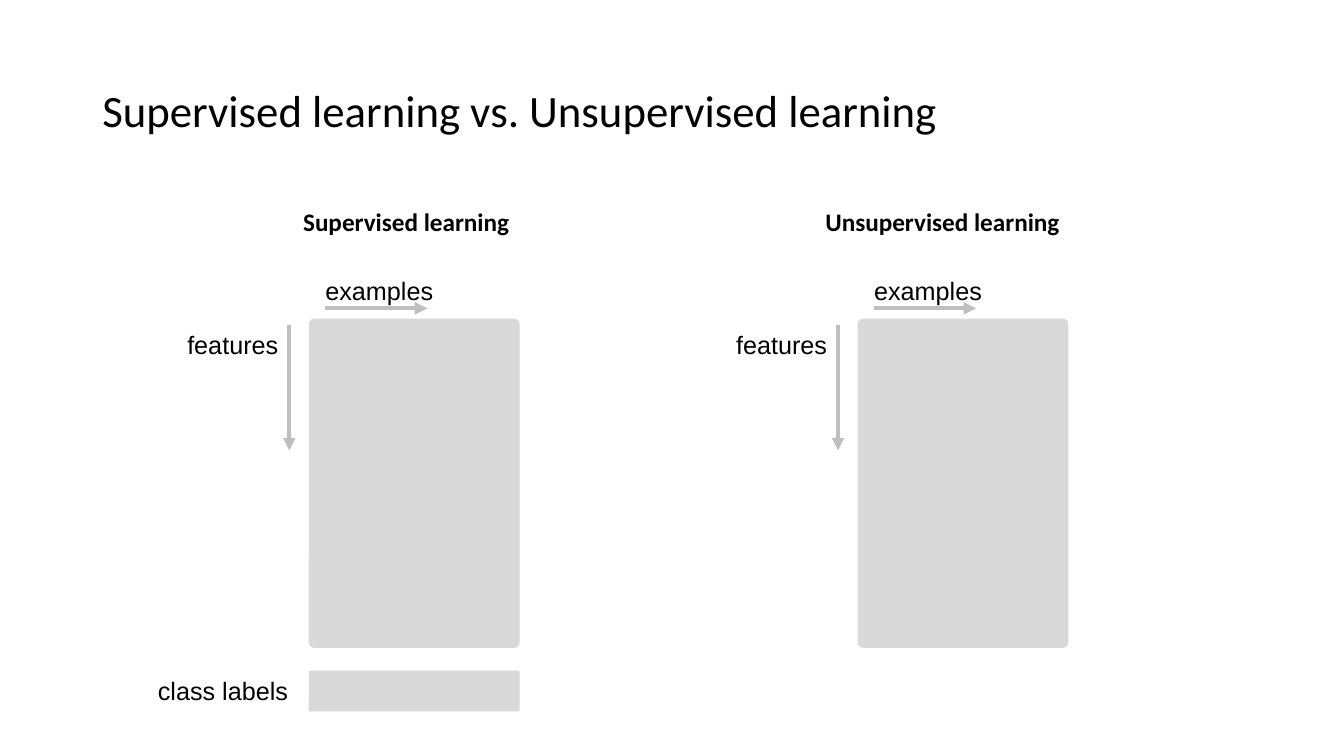
"""Builds a slide that compares supervised with unsupervised learning."""
from lxml import etree
from pptx import Presentation
from pptx.dml.color import RGBColor
from pptx.enum.shapes import MSO_CONNECTOR, MSO_SHAPE
from pptx.enum.text import MSO_ANCHOR, MSO_AUTO_SIZE
from pptx.oxml.ns import qn
from pptx.util import Cm, Pt

STRAIGHT = MSO_CONNECTOR.STRAIGHT
ROUNDED = MSO_SHAPE.ROUNDED_RECTANGLE
TOP, MIDDLE = MSO_ANCHOR.TOP, MSO_ANCHOR.MIDDLE
FIT, NO_FIT = MSO_AUTO_SIZE.SHAPE_TO_FIT_TEXT, MSO_AUTO_SIZE.NONE

BLACK, ARROW_GREY, BOX_GREY = "000000", "BFBFBF", "D9D9D9"
LEFT_PANEL, PANEL_STEP = 7.8, 13.83
BOX_WIDTH = 5.28
LABEL_HEIGHT = 1.02


def paint(color_format, color):
    color_format.rgb = RGBColor.from_string(color)


def add_text(s, text, x, y, w, h=LABEL_HEIGHT, *, font="Arial", size=18,
             bold=False, wrap=False, anchor=TOP, fit=FIT, spacing=1.0):
    tf = s.shapes.add_textbox(Cm(x), Cm(y), Cm(w), Cm(h)).text_frame
    tf.word_wrap = wrap
    tf.auto_size = fit
    tf.vertical_anchor = anchor
    p = tf.paragraphs[0]
    p.line_spacing = spacing
    r = p.add_run()
    r.text = text
    r.font.name = font
    r.font.size = Pt(size)
    r.font.bold = bold
    paint(r.font.color, BLACK)


def add_box(s, x, y, h):
    sp = s.shapes.add_shape(ROUNDED, Cm(x), Cm(y), Cm(BOX_WIDTH), Cm(h))
    sp.adjustments[0] = 0.024
    sp.shadow.inherit = False
    sp.fill.solid()
    paint(sp.fill.fore_color, BOX_GREY)
    paint(sp.line.color, BOX_GREY)
    sp.line.width = Pt(1)


def add_arrow(s, x1, y1, x2, y2):
    line = s.shapes.add_connector(STRAIGHT, Cm(x1), Cm(y1), Cm(x2), Cm(y2))
    paint(line.line.color, ARROW_GREY)
    line.line.width = Pt(3)
    ln = line.line._get_or_add_ln()
    etree.SubElement(ln, qn("a:tailEnd"), type="triangle")
    etree.SubElement(line._element.spPr, qn("a:effectLst"))


def add_data_panel(s, x):
    add_box(s, x, 8.05, 8.26)
    add_arrow(s, x - 0.51, 8.18, x - 0.51, 11.35)
    add_text(s, "features", x - 3.33, 8.18, 2.82)
    add_arrow(s, x + 0.4, 7.77, x + 2.97, 7.77)
    add_text(s, "examples", x + 0.15, 6.81, 3.45, wrap=True)


def add_class_labels(s, x):
    add_box(s, x, 16.92, 0.99)
    add_text(s, "class labels", x - 4.07, 16.89, 3.84)


def main():
    prs = Presentation()
    prs.slide_width, prs.slide_height = Cm(33.87), Cm(19.05)
    s = prs.slides.add_slide(prs.slide_layouts[6])
    add_text(s, "Supervised learning vs. Unsupervised learning",
             2.33, 1.02, 29.21, 3.68, font="Calibri", size=32, wrap=True,
             anchor=MIDDLE, fit=NO_FIT, spacing=0.9)
    headings = [("Supervised learning", 7.39, 5.74),
                ("Unsupervised learning", 20.55, 6.45)]
    for i, (heading, x, w) in enumerate(headings):
        add_data_panel(s, LEFT_PANEL + i * PANEL_STEP)
        add_text(s, heading, x, 5.08, w, font="Calibri", bold=True)
    add_class_labels(s, LEFT_PANEL)
    prs.save("out.pptx")


if __name__ == "__main__":
    main()
